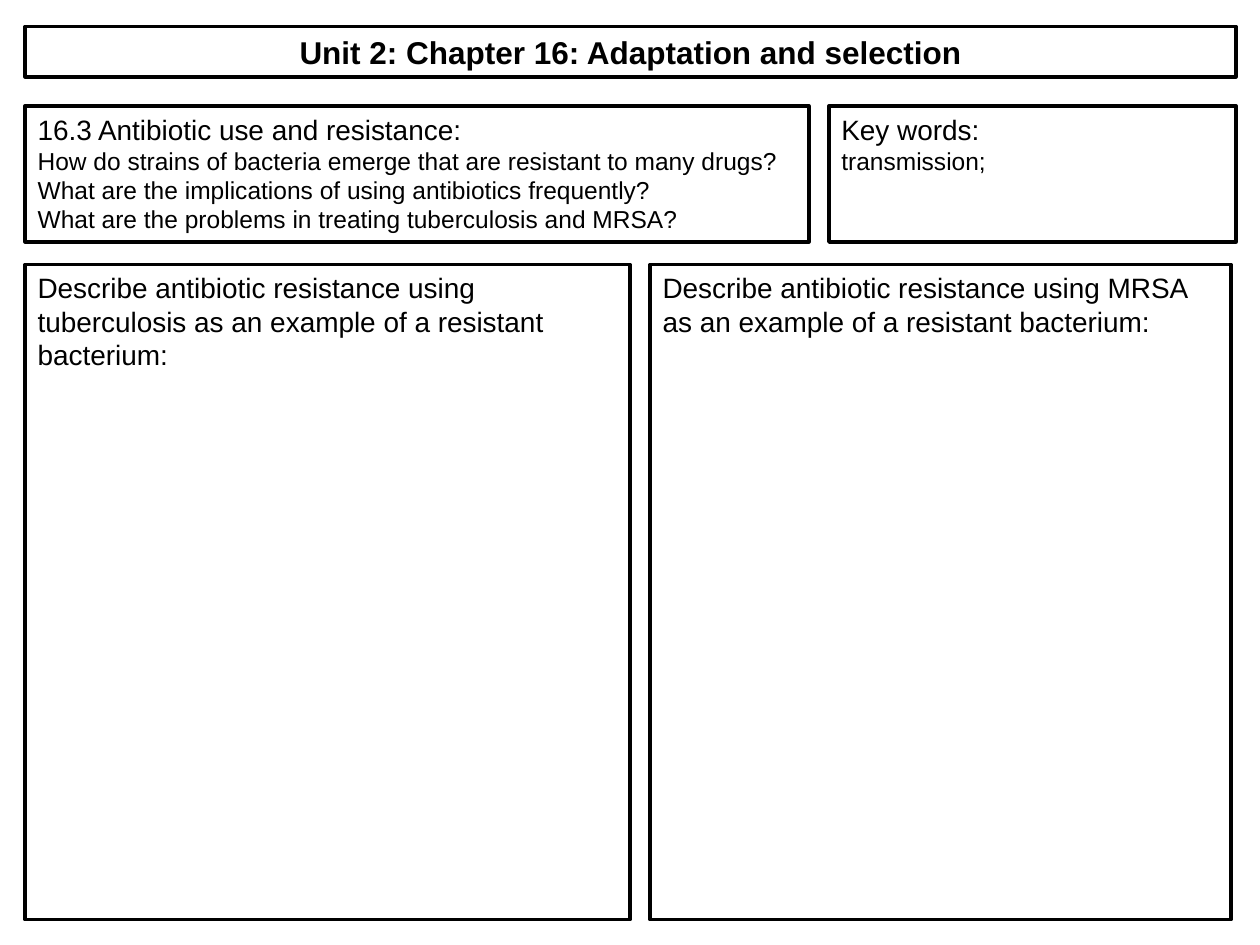
from dataclasses import dataclass

from pptx import Presentation
from pptx.dml.color import RGBColor
from pptx.enum.shapes import MSO_SHAPE
from pptx.enum.text import MSO_ANCHOR, MSO_AUTO_SIZE, PP_ALIGN
from pptx.util import Pt

RECTANGLE = MSO_SHAPE.RECTANGLE
TOP = MSO_ANCHOR.TOP
NO_AUTOFIT = MSO_AUTO_SIZE.NONE
LEFT, CENTER = PP_ALIGN.LEFT, PP_ALIGN.CENTER


@dataclass(frozen=True)
class Theme:
    font: str = "Arial"
    ink: RGBColor = RGBColor(0, 0, 0)
    paper: RGBColor = RGBColor(255, 255, 255)
    title_size: int = 18
    heading_size: int = 16
    detail_size: int = 14
    border: int = 2


THEME = Theme()
TITLE = "Unit 2: Chapter 16: Adaptation and selection"

# Each row: top, height, and its boxes as (width, heading, details)
ROWS = [
    (60.5, 77.8, [
        (447.8, "16.3 Antibiotic use and resistance:", [
            "How do strains of bacteria emerge that are resistant to many drugs?",
            "What are the implications of using antibiotics frequently?",
            "What are the problems in treating tuberculosis and MRSA?",
        ]),
        (232.6, "Key words:", ["transmission;"]),
    ]),
    (151.2, 374.4, [
        (345.6, "Describe antibiotic resistance using tuberculosis "
                "as an example of a resistant bacterium:", []),
        (331.9, "Describe antibiotic resistance using MRSA "
                "as an example of a resistant bacterium:", []),
    ]),
]
MARGIN, GAP = 14.4, 11.5
TITLE_TOP, TITLE_WIDTH, TITLE_HEIGHT = 15.1, 691.9, 28.8


def style_box(shape):
    shape.fill.solid()
    shape.fill.fore_color.rgb = THEME.paper
    shape.line.color.rgb = THEME.ink
    shape.line.width = Pt(THEME.border)
    frame = shape.text_frame
    frame.word_wrap = True
    frame.auto_size = NO_AUTOFIT
    frame.vertical_anchor = TOP


def write_lines(shape, lines, sizes, alignment=LEFT, bold=False):
    frame = shape.text_frame
    frame.text = "\n".join(lines)
    for paragraph, size in zip(frame.paragraphs, sizes):
        paragraph.alignment = alignment
        font = paragraph.font
        font.name = THEME.font
        font.size = Pt(size)
        font.bold = bold
        font.color.rgb = THEME.ink


def add_title(slide):
    title = slide.shapes.title
    title.left, title.top = Pt(MARGIN), Pt(TITLE_TOP)
    title.width, title.height = Pt(TITLE_WIDTH), Pt(TITLE_HEIGHT)
    style_box(title)
    write_lines(title, [TITLE], [THEME.title_size], CENTER, bold=True)


def add_row(slide, top, height, boxes):
    left = MARGIN
    for width, heading, details in boxes:
        box = slide.shapes.add_shape(
            RECTANGLE, Pt(left), Pt(top), Pt(width), Pt(height))
        box.shadow.inherit = False
        style_box(box)
        sizes = [THEME.heading_size] + [THEME.detail_size] * len(details)
        write_lines(box, [heading, *details], sizes)
        left += width + GAP


def main():
    presentation = Presentation()
    presentation.slide_width, presentation.slide_height = Pt(720), Pt(540)
    title_only = presentation.slide_layouts.get_by_name("Title Only")
    slide = presentation.slides.add_slide(title_only)
    add_title(slide)
    for top, height, boxes in ROWS:
        add_row(slide, top, height, boxes)
    presentation.save("out.pptx")


if __name__ == "__main__":
    main()
